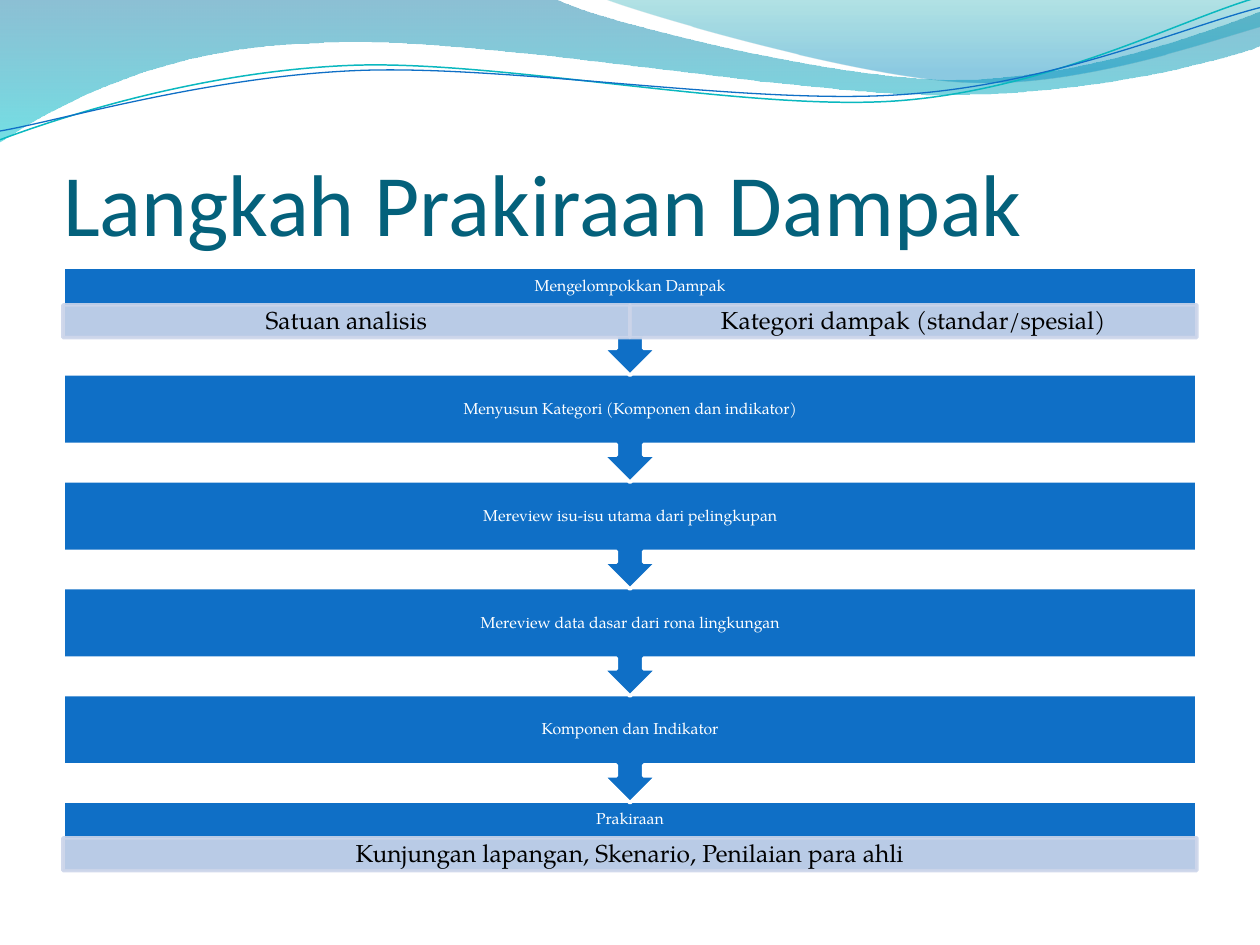
import dataclasses
import math

import pptx
import pptx.dml.color
import pptx.enum.shapes
import pptx.enum.text
import pptx.oxml.ns
import pptx.util
from lxml import etree
from pptx.util import Inches

RGB = pptx.dml.color.RGBColor.from_string
SHAPE = pptx.enum.shapes.MSO_SHAPE
ALIGN = pptx.enum.text.PP_ALIGN
ANCHOR = pptx.enum.text.MSO_ANCHOR
qn = pptx.oxml.ns.qn


@dataclasses.dataclass(frozen=True)
class Theme:
    """Colours, fonts and type sizes of the slide."""
    title: str = "04617B"
    step: str = "0F6FC6"
    detail: str = "CCD5EA"
    light: str = "FFFFFF"
    dark: str = "000000"
    teal: str = "0AB8BF"
    title_font: str = "Calibri"
    body_font: str = "TeX Gyre Pagella"
    title_size: int = 50
    step_size: int = 9
    detail_size: int = 14


T = Theme()

BANDS = [
    ((-0.01, -0.01, 10.02, 1.14),
     [(0, 0), (4.4, -0.01),
      (4.76, 0.17, 6.64, 0.63, 7.58, 0.63), (8.53, 0.63, 9.58, 0.26, 10, 0.09),
      (10.01, 0.36),
      (9.83, 0.44, 8.7, 0.76, 7.46, 0.75), (6.22, 0.75, 3.82, 0.28, 2.57, 0.34),
      (1.29, 0.36, 0.46, 0.83, -0.01, 1.13), (0, 0)],
     [(0, "0074A1", 45), (1, "00C6CF", 55)]),
    ((4.79, -0.01, 5.21, 0.7),
     [(4.79, -0.01),
      (5.09, 0.11, 6.82, 0.62, 7.69, 0.65), (8.56, 0.69, 9.61, 0.32, 10, 0.21),
      (10, 0), (4.79, -0.01)],
     [(0, "00A1A9", 30), (0.8, "008BBF", 45)]),
]
STRAND_TILT = -2.7
STRANDS = [
    ((-0.02, 0.22, 10.02, 0.71),
     [(0, 1.11), (0.48, 0.93, 1.58, 0.57, 2.77, 0.52),
      (3.95, 0.47, 5.93, 0.89, 7.13, 0.8), (8.33, 0.71, 9.38, 0.15, 9.98, -0.02)],
     T.teal, 0.85),
    ((-0.02, 0.3, 10.03, 0.58),
     [(0, 1.04), (0.47, 0.96, 1.64, 0.61, 2.83, 0.56),
      (4.03, 0.51, 5.97, 0.84, 7.17, 0.75), (8.36, 0.67, 9.41, 0.21, 10, 0.06)],
     T.step, 0.75),
]
STEPS = [
    ("Mengelompokkan Dampak", ["Satuan analisis", "Kategori dampak (standar/spesial)"]),
    ("Menyusun Kategori (Komponen dan indikator)", []),
    ("Mereview isu-isu utama dari pelingkupan", []),
    ("Mereview data dasar dari rona lingkungan", []),
    ("Komponen dan Indikator", []),
    ("Prakiraan", ["Kunjungan lapangan, Skenario, Penilaian para ahli"]),
]


def set_alpha(sp, percents):
    """Give the colours of a shape, in order, their opacity in percent."""
    for clr, percent in zip(sp._element.spPr.iter(qn("a:srgbClr")), percents):
        etree.SubElement(clr, qn("a:alpha")).set("val", str(percent * 1000))


def add_curve(s, box, segments, close, tilt=0):
    """Add a freeform of lines and Bezier curves in a box tilted by degrees."""
    x, y, w, h = box
    builder = s.shapes.build_freeform(Inches(x), Inches(y))
    builder.add_line_segments([(Inches(x + w), Inches(y + h))], close=close)
    sp = builder.convert_to_shape()
    sp.shadow.inherit = False
    sp.rotation = tilt % 360
    cos, sin = math.cos(math.radians(-tilt)), math.sin(math.radians(-tilt))
    outline = next(sp._element.spPr.iter(qn("a:path")))
    for child in list(outline):
        outline.remove(child)
    for i, seg in enumerate(segments):
        tag = "a:moveTo" if i == 0 else "a:lnTo" if len(seg) == 2 else "a:cubicBezTo"
        part = etree.SubElement(outline, qn(tag))
        for px, py in zip(seg[::2], seg[1::2]):
            dx, dy = px - x - w / 2, py - y - h / 2
            pt = etree.SubElement(part, qn("a:pt"))
            pt.set("x", str(Inches(w / 2 + cos * dx - sin * dy)))
            pt.set("y", str(Inches(h / 2 + sin * dx + cos * dy)))
    if close:
        etree.SubElement(outline, qn("a:close"))
    return sp


def add_waves(s):
    """Draw the gradient bands and thin strands along the top edge."""
    for box, segments, stops in BANDS:
        sp = add_curve(s, box, segments, True)
        sp.line.fill.background()
        sp.fill.gradient()
        sp.fill.gradient_angle = 270
        for stop, (position, color, _) in zip(sp.fill.gradient_stops, stops):
            stop.position = position
            stop.color.rgb = RGB(color)
        set_alpha(sp, [alpha for _, _, alpha in stops])
    for box, segments, color, width in STRANDS:
        sp = add_curve(s, box, segments, False, STRAND_TILT)
        sp.fill.background()
        sp.line.color.rgb = RGB(color)
        sp.line.width = pptx.util.Pt(width)


def add_title(s, text, x, y, w, h):
    """Place and format the title placeholder."""
    sp = s.shapes.title
    sp.left, sp.top, sp.width, sp.height = map(Inches, (x, y, w, h))
    tf = sp.text_frame
    tf.auto_size = pptx.enum.text.MSO_AUTO_SIZE.NONE
    tf.vertical_anchor = ANCHOR.BOTTOM
    tf.margin_left = tf.margin_right = tf.margin_bottom = 0
    tf.margin_top = Inches(0.05)
    tf.text = text
    p = tf.paragraphs[0]
    p.alignment = ALIGN.LEFT
    set_font(p, T.title_font, T.title_size, T.title)


def set_font(p, name, size, color):
    """Set the font of a whole paragraph."""
    p.font.name = name
    p.font.size = pptx.util.Pt(size)
    p.font.color.rgb = RGB(color)


def add_label(s, text, size, color, mx, my, x, y, w, h):
    """Add one centred line of text with the given margins."""
    tf = s.shapes.add_textbox(*map(Inches, (x, y, w, h))).text_frame
    tf.word_wrap = True
    tf.vertical_anchor = ANCHOR.MIDDLE
    tf.margin_left = tf.margin_right = Inches(mx)
    tf.margin_top = tf.margin_bottom = Inches(my)
    tf.text = text
    p = tf.paragraphs[0]
    p.alignment = ALIGN.CENTER
    p.line_spacing = 0.9
    set_font(p, T.body_font, size, color)


def add_box(s, kind, fill, line, x, y, w, h):
    """Add a filled and outlined preset shape."""
    sp = s.shapes.add_shape(kind, *map(Inches, (x, y, w, h)))
    sp.shadow.inherit = False
    sp.fill.solid()
    sp.fill.fore_color.rgb = RGB(fill)
    sp.line.color.rgb = RGB(line)
    sp.line.width = pptx.util.Pt(2)
    return sp


def add_step(s, text, details, last, x, y, w):
    """Add one step with its heading and row of details."""
    if last:
        add_box(s, SHAPE.RECTANGLE, T.step, T.light, x, y, w, 0.56)
    else:
        sp = add_box(s, SHAPE.UP_ARROW_CALLOUT, T.step, T.light, x, y, w, 0.86)
        sp.rotation = 180
    head = 0.56 if not details else 0.29 if last else 0.3
    add_label(s, text, T.step_size, T.light, 0.07, 0.07, x, y, w, head)
    for i, detail in enumerate(details):
        width = w / len(details)
        cell = (x + i * width, y + head, width, 0.26)
        set_alpha(add_box(s, SHAPE.RECTANGLE, T.detail, T.detail, *cell), [90, 90])
        add_label(s, detail, T.detail_size, T.dark, 0.11, 0.02, *cell)


def add_process(s, steps, x, y, w, h):
    """Stack the steps evenly in the box, the last one at the back."""
    last = len(steps) - 1
    pitch = (h - 0.56) / last
    for i, (text, details) in reversed(list(enumerate(steps))):
        add_step(s, text, details, i == last, x, y + i * pitch, w)


def main():
    """Build the slide and save it."""
    prs = pptx.Presentation()
    prs.slide_width, prs.slide_height = Inches(10), Inches(7.5)
    s = prs.slides.add_slide(prs.slide_layouts[5])
    add_waves(s)
    add_title(s, "Langkah Prakiraan Dampak", 0.5, 0.77, 9, 1.25)
    add_process(s, STEPS, 0.5, 2.12, 9, 4.8)
    prs.save("out.pptx")


if __name__ == "__main__":
    main()
